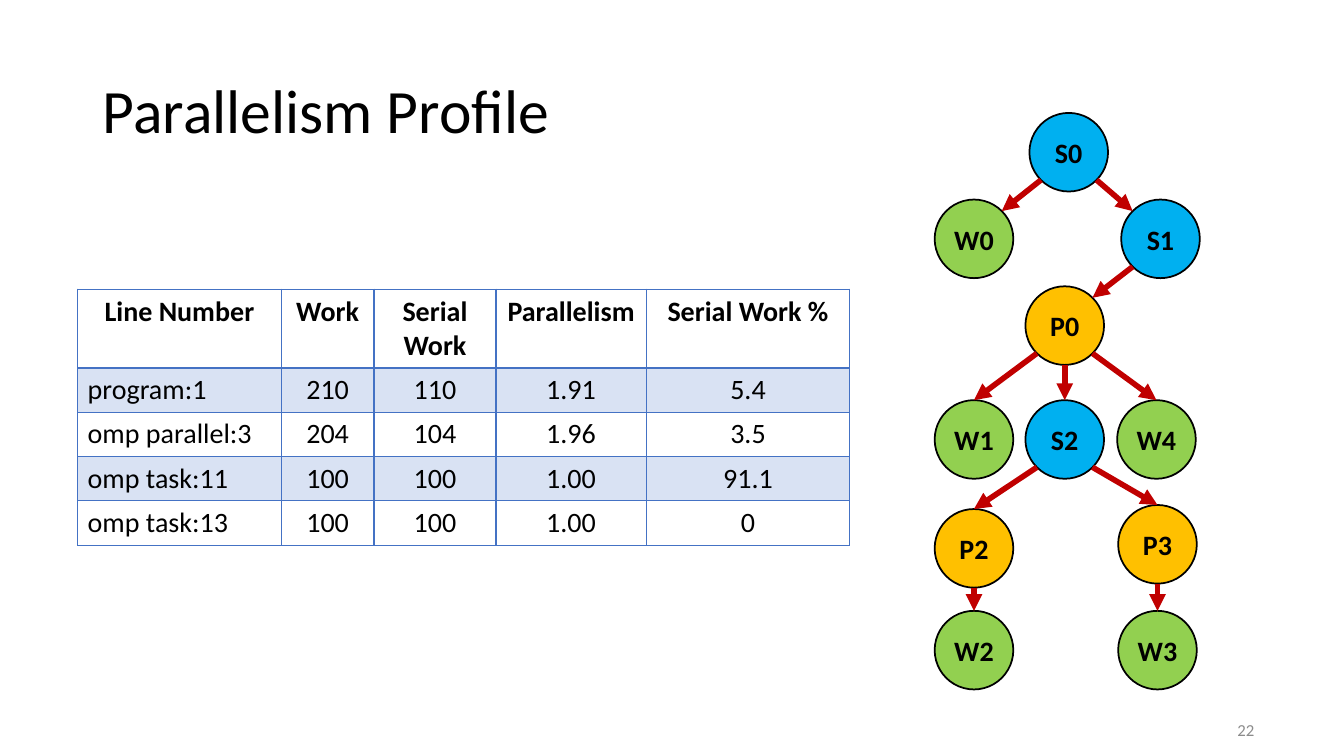
from math import sqrt

from lxml import etree
from pptx import Presentation
from pptx.dml.color import RGBColor
from pptx.enum import shapes, text
from pptx.oxml import parse_xml
from pptx.oxml.ns import nsdecls, qn
from pptx.util import Inches, Pt

FONT = "Calibri"
BLACK, GREY, RED, TABLE_BLUE = "000000", "8C8C8C", "C00000", "4472C4"
NODE_FILLS = {"S": "00B0F0", "W": "92D050", "P": "FFC000"}
DIAMETER = 0.78

COLUMN_WIDTHS = [2.02, 0.92, 1.21, 1.49, 2.02]
HEADER_HEIGHT, ROW_HEIGHT = 0.78, 0.44
ROWS = [
    ["Line Number", "Work", "Serial Work", "Parallelism", "Serial Work %"],
    ["program:1", "210", "110", "1.91", "5.4"],
    ["omp parallel:3", "204", "104", "1.96", "3.5"],
    ["omp task:11", "100", "100", "1.00", "91.1"],
    ["omp task:13", "100", "100", "1.00", "0"],
]

# Left and top of each node; the first letter gives its kind
NODES = {
    "S0": (10.21, 1.12),
    "W0": (9.27, 1.98), "S1": (11.12, 1.98),
    "P0": (10.17, 2.84),
    "W1": (9.27, 3.97), "S2": (10.17, 3.97), "W4": (11.08, 3.97),
    "P2": (9.27, 5.05), "P3": (11.09, 5.01),
    "W2": (9.27, 6.06), "W3": (11.09, 6.06),
}

# Points on a circle, as steps from its centre in radii
DIAGONAL = sqrt(0.5)
SITES = {
    "top": (0, -1), "bottom": (0, 1),
    "top left": (-DIAGONAL, -DIAGONAL), "top right": (DIAGONAL, -DIAGONAL),
    "bottom left": (-DIAGONAL, DIAGONAL), "bottom right": (DIAGONAL, DIAGONAL),
}
EDGES = [
    ("S0", "bottom left", "W0", "top right"),
    ("S0", "bottom right", "S1", "top left"),
    ("S1", "bottom left", "P0", "top right"),
    ("P0", "bottom left", "W1", "top"),
    ("P0", "bottom", "S2", "top"),
    ("P0", "bottom right", "W4", "top"),
    ("S2", "bottom left", "P2", "top"),
    ("S2", "bottom right", "P3", "top"),
    ("P2", "bottom", "W2", "top"),
    ("P3", "bottom", "W3", "top"),
]


def rgb(color):
    return RGBColor.from_string(color)


def format_text(tf, size, color=BLACK, bold=False, align=text.PP_ALIGN.CENTER):
    for p in tf.paragraphs:
        p.alignment = align
        for r in p.runs:
            r.font.name = FONT
            r.font.size = Pt(size)
            r.font.bold = bold
            r.font.color.rgb = rgb(color)


def add_title(slide, title):
    s = slide.shapes.title
    s.left, s.top, s.width, s.height = map(Inches, (0.92, 0.4, 11.5, 1.45))
    tf = s.text_frame
    tf.text = title
    tf.vertical_anchor = text.MSO_ANCHOR.MIDDLE
    tf.paragraphs[0].line_spacing = 0.9
    format_text(tf, 44, align=text.PP_ALIGN.LEFT)


def add_page_number(slide, number):
    s = slide.shapes.add_textbox(Inches(9.54), Inches(7.04), Inches(3), Inches(0.4))
    tf = s.text_frame
    tf.word_wrap = True
    tf.text = number
    tf.vertical_anchor = text.MSO_ANCHOR.MIDDLE
    format_text(tf, 12, GREY, align=text.PP_ALIGN.RIGHT)


def set_borders(cell, widths):
    tc_pr = cell._tc.get_or_add_tcPr()
    for i, (side, width) in enumerate(widths.items()):
        tc_pr.insert(i, parse_xml(
            f'<a:ln{side} {nsdecls("a")} w="{Pt(width)}"><a:solidFill>'
            f'<a:srgbClr val="{TABLE_BLUE}"/></a:solidFill></a:ln{side}>'))


def fill_cell(cell, banded):
    if not banded:
        cell.fill.background()
        return
    cell.fill.solid()
    cell.fill.fore_color.rgb = rgb(TABLE_BLUE)
    color = cell._tc.tcPr.find(f'{qn("a:solidFill")}/{qn("a:srgbClr")}')
    etree.SubElement(color, qn("a:alpha"), val="20000")


def add_profile_table(slide):
    row_heights = [HEADER_HEIGHT] + [ROW_HEIGHT] * (len(ROWS) - 1)
    frame = slide.shapes.add_table(
        len(ROWS), len(COLUMN_WIDTHS), Inches(0.77), Inches(2.87),
        Inches(sum(COLUMN_WIDTHS)), Inches(sum(row_heights)))
    table = frame.table
    table.first_row = table.horz_banding = False
    for column, width in zip(table.columns, COLUMN_WIDTHS):
        column.width = Inches(width)
    for table_row, height in zip(table.rows, row_heights):
        table_row.height = Inches(height)
    for i, row in enumerate(ROWS):
        for j, value in enumerate(row):
            cell = table.cell(i, j)
            cell.text = value
            left = i > 0 and j == 0
            format_text(cell.text_frame, 20, bold=i == 0,
                        align=text.PP_ALIGN.LEFT if left else text.PP_ALIGN.CENTER)
            fill_cell(cell, banded=i % 2 == 1)
            # The rule under the header is thicker
            set_borders(cell, {"L": 1, "R": 1, "T": 2 if i == 1 else 1,
                               "B": 2 if i == 0 else 1})


def add_node(group, name):
    left, top = NODES[name]
    s = group.shapes.add_shape(shapes.MSO_SHAPE.OVAL, Inches(left), Inches(top),
                               Inches(DIAMETER), Inches(DIAMETER))
    s.shadow.inherit = False
    s.fill.solid()
    s.fill.fore_color.rgb = rgb(NODE_FILLS[name[0]])
    s.line.color.rgb = rgb(BLACK)
    s.line.width = Pt(1.25)
    tf = s.text_frame
    tf.text = name
    tf.word_wrap = False
    tf.vertical_anchor = text.MSO_ANCHOR.MIDDLE
    tf.margin_left = tf.margin_right = Inches(0.08)
    tf.margin_top = tf.margin_bottom = Inches(0.04)
    format_text(tf, 20, bold=True)


def site_point(name, site):
    radius = DIAMETER / 2
    return [Inches(start + radius * (1 + step))
            for start, step in zip(NODES[name], SITES[site])]


def add_arrow(group, parent, parent_site, child, child_site):
    s = group.shapes.add_connector(
        shapes.MSO_CONNECTOR.STRAIGHT,
        *site_point(parent, parent_site), *site_point(child, child_site))
    s.line.color.rgb = rgb(RED)
    s.line.width = Pt(4)
    etree.SubElement(s.line._get_or_add_ln(), qn("a:tailEnd"), type="triangle")
    etree.SubElement(s._element.spPr, qn("a:effectLst"))


def main():
    prs = Presentation()
    prs.slide_width, prs.slide_height = Inches(13.33), Inches(7.5)
    slide = prs.slides.add_slide(prs.slide_layouts[5])

    # Title, page number and table
    add_title(slide, "Parallelism Profile")
    add_page_number(slide, "22")
    add_profile_table(slide)

    # Task graph
    graph = slide.shapes.add_group_shape()
    for name in NODES:
        add_node(graph, name)
    for edge in EDGES:
        add_arrow(graph, *edge)

    prs.save("out.pptx")


if __name__ == "__main__":
    main()
